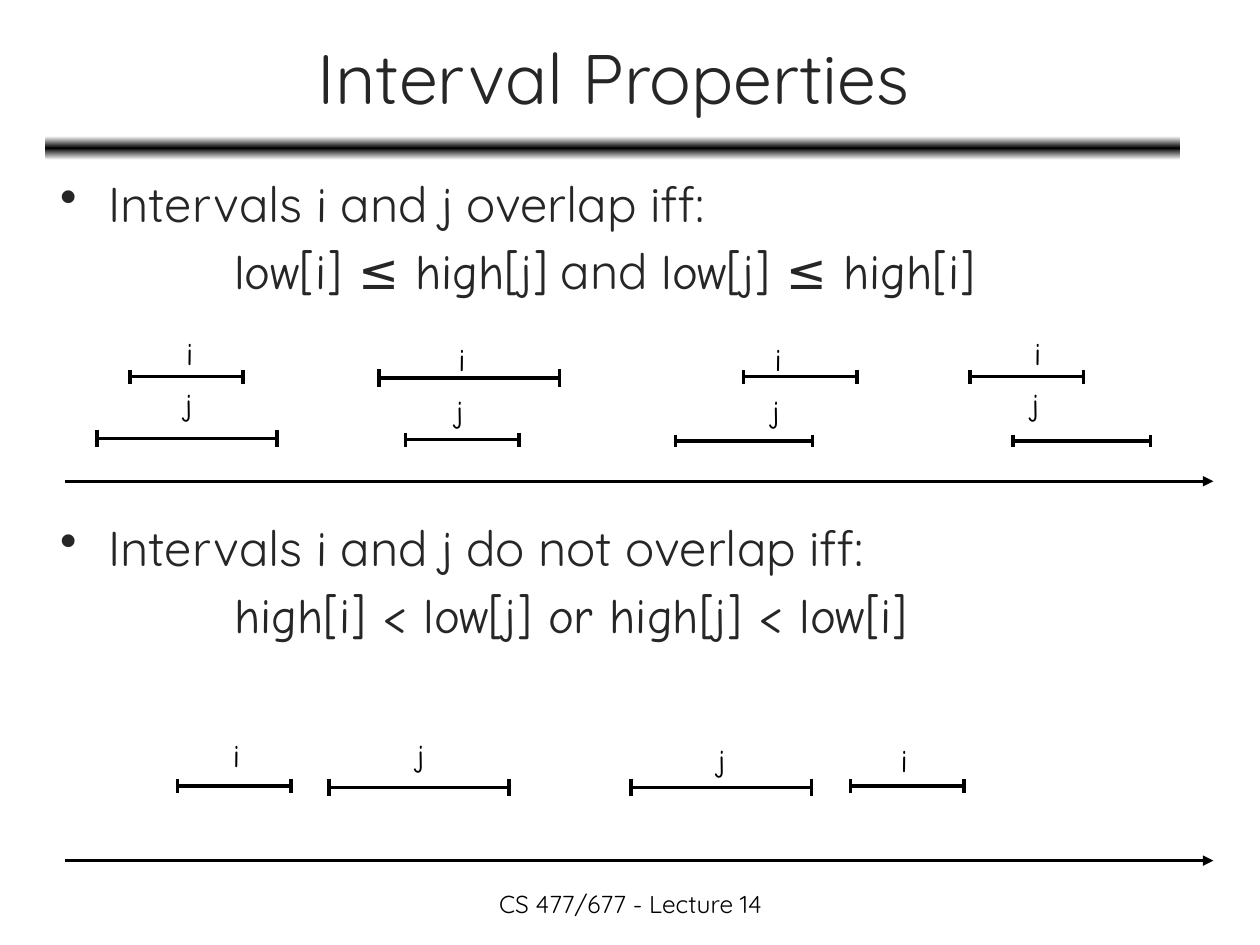
import pptx
import pptx.dml.color
import pptx.enum.shapes
import pptx.enum.text
import pptx.oxml
import pptx.oxml.ns
import pptx.util
from pptx.util import Inches

BLACK = pptx.dml.color.RGBColor(0x00, 0x00, 0x00)
CHARCOAL = pptx.dml.color.RGBColor(0x26, 0x26, 0x26)
SANS, HAND = "Quicksand", "Comic Neue"
DRAWING = pptx.oxml.ns.nsdecls("a")

# Interval kinds: length and half the height of the end caps, in inches
SHORT, MEDIUM, LONG = (0.9, 0.055), (1.09, 0.05), (1.43, 0.07)

# Examples: left, top, then (name, kind, start, line height, label offset)
OVERLAPPING = [
    (0.77, 2.6, [("i", SHORT, 0.26, 0.39, (0.61, 0)), ("j", LONG, 0, 0.88, (0.6, 0.41))]),
    (3.01, 2.65, [("i", LONG, 0, 0.35, (0.53, 0)), ("j", SHORT, 0.21, 0.84, (0.51, 0.41))]),
    (5.36, 2.65, [("i", SHORT, 0.54, 0.34, (0.69, 0)), ("j", MEDIUM, 0, 0.85, (0.67, 0.41))]),
    (7.7, 2.6, [("i", SHORT, 0, 0.39, (0.41, 0)), ("j", MEDIUM, 0.34, 0.9, (0.39, 0.41))]),
]
SEPARATE = [
    (1.41, 5.79, [("i", SHORT, 0, 0.45, (0.34, 0)), ("j", LONG, 1.2, 0.46, (1.8, 0))]),
    (5.01, 5.83, [("j", LONG, 0, 0.42, (0.59, 0)), ("i", SHORT, 1.74, 0.41, (2.04, 0))]),
]


def add_span(para, text, size, font, color):
    span = para.add_run()
    span.text = text
    values = {"size": pptx.util.Pt(size), "name": font}
    for name, value in values.items():
        setattr(span.font, name, value)
    span.font.color.rgb = color


def add_text_box(shapes, box, **frame_format):
    frame = shapes.add_textbox(*map(Inches, box)).text_frame
    values = {"word_wrap": True, **frame_format}
    for name, value in values.items():
        setattr(frame, name, value)
    return frame


def add_centred_line(page, box, text, size, color):
    frame = add_text_box(page.shapes, box,
                         vertical_anchor=pptx.enum.text.MSO_ANCHOR.MIDDLE)
    para = frame.paragraphs[0]
    para.alignment = pptx.enum.text.PP_ALIGN.CENTER
    add_span(para, text, size, SANS, color)


def add_rule(page, box):
    """Bar that fades from black in the middle to white at both edges."""
    rule = page.shapes.add_shape(
        pptx.enum.shapes.MSO_SHAPE.ROUNDED_RECTANGLE, *map(Inches, box))
    rule.shadow.inherit = False
    rule.line.fill.background()
    rule.fill.gradient()
    rule.fill.gradient_angle = 90
    stops = rule.fill._fill._gradFill.find(pptx.oxml.ns.qn("a:gsLst"))
    for stop in list(stops):
        stops.remove(stop)
    for position, color in ((0, "FFFFFF"), (50000, "000000"), (100000, "FFFFFF")):
        stops.append(pptx.oxml.parse_xml(
            f'<a:gs {DRAWING} pos="{position}"><a:srgbClr val="{color}"/></a:gs>'))


def add_statement(page, box, ending, formula):
    """Bulleted sentence with an indented formula below it."""
    frame = add_text_box(page.shapes, box)
    sentence = [("Intervals ", SANS), ("i", HAND), (" and ", SANS),
                ("j", HAND), (ending, SANS)]
    lines = [(sentence, 0.38, -0.38, '<a:buChar {} char="•"/>'),
             (formula, 1.38, 0, "<a:buNone {}/>")]
    for number, (spans, margin, indent, bullet) in enumerate(lines):
        para = frame.add_paragraph() if number else frame.paragraphs[0]
        para.space_before = pptx.util.Pt(4.5)
        properties = para._p.get_or_add_pPr()
        for name, value in {"marL": margin, "indent": indent}.items():
            properties.set(name, str(Inches(value)))
        properties.append(pptx.oxml.parse_xml(bullet.format(DRAWING)))
        for text, font in spans:
            add_span(para, text, 28, font, CHARCOAL)


def add_line(shapes, start, end, arrow=False):
    line = shapes.add_connector(pptx.enum.shapes.MSO_CONNECTOR.STRAIGHT,
                                *map(Inches, (*start, *end)))
    line.line.color.rgb = BLACK
    line.line.width = pptx.util.Pt(2)
    if arrow:
        line.line._get_or_add_ln().append(
            pptx.oxml.parse_xml(f'<a:tailEnd {DRAWING} type="triangle"/>'))
    line._element.spPr.append(pptx.oxml.parse_xml(f"<a:effectLst {DRAWING}/>"))


def add_example(page, left, top, intervals):
    """Group of two capped intervals with their names."""
    group = page.shapes.add_group_shape().shapes
    for name, (length, cap), start, height, (label_x, label_y) in intervals:
        x, y = left + start, top + height
        add_line(group, (x, y), (x + length, y))
        for end in (x, x + length):
            add_line(group, (end, y - cap), (end, y + cap))
        label = add_text_box(
            group, (left + label_x, top + label_y, 0.27 if name == "i" else 0.3, 0.4),
            word_wrap=False,
            auto_size=pptx.enum.text.MSO_AUTO_SIZE.SHAPE_TO_FIT_TEXT)
        add_span(label.paragraphs[0], name, 18, HAND, BLACK)


def add_timeline(page, examples, axis_y):
    for example in examples:
        add_example(page, *example)
    add_line(page.shapes, (0.52, axis_y), (9.63, axis_y), arrow=True)


def main():
    deck = pptx.Presentation()
    deck.slide_width, deck.slide_height = Inches(10), Inches(7.5)
    page = deck.slides.add_slide(deck.slide_layouts[6])

    # Heading
    add_rule(page, (0.36, 1.08, 9.01, 0.19))
    add_centred_line(page, (0.37, 0.11, 9, 0.99), "Interval Properties", 40, CHARCOAL)

    # Overlapping intervals
    add_statement(page, (0.38, 1.33, 9, 1.2), " overlap iff:",
                  [("low[i] ≤ high[j]", HAND), (" and ", SANS),
                   ("low[j] ≤ high[i]", HAND)])
    add_timeline(page, OVERLAPPING, 3.82)

    # Intervals that do not overlap
    add_statement(page, (0.38, 4.06, 9, 1.2), " do not overlap iff:",
                  [("high[i] < low[j] or high[j] < low[i]", HAND)])
    add_timeline(page, SEPARATE, 6.83)

    # Footer
    add_centred_line(page, (3.42, 7, 3.17, 0.35), "CS 477/677 - Lecture 14", 14, BLACK)
    deck.save("out.pptx")


if __name__ == "__main__":
    main()
